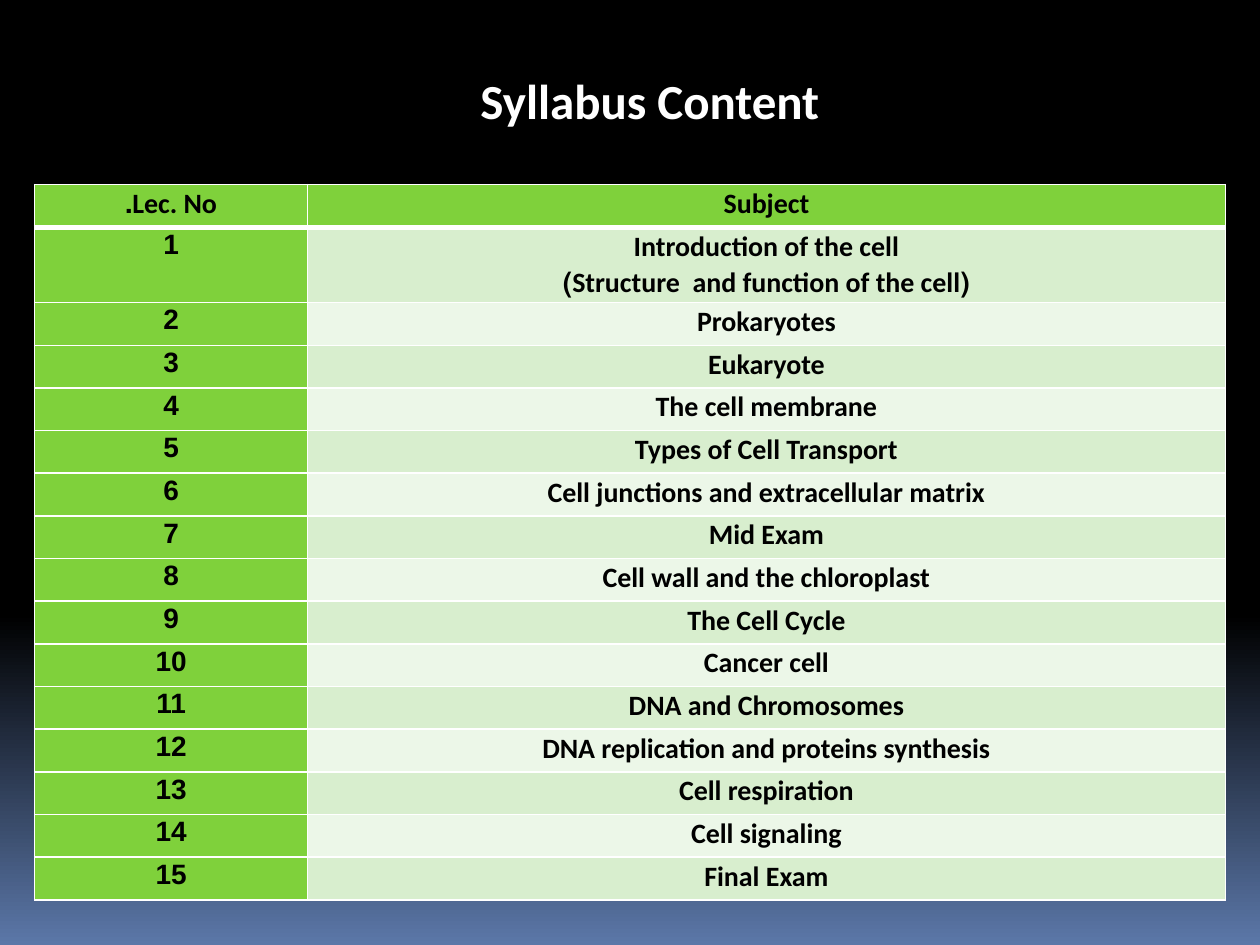
import dataclasses

import pptx
import pptx.dml.color
import pptx.enum.dml
import pptx.enum.shapes
import pptx.enum.text
import pptx.oxml.ns
import pptx.util
from lxml import etree

Cm = pptx.util.Cm
Pt = pptx.util.Pt
CENTER = pptx.enum.text.PP_ALIGN.CENTER


@dataclasses.dataclass(frozen=True)
class Theme:
    font: str = "Calibri"
    digit_font: str = "Arial"
    title_size: int = 28
    table_size: int = 16
    black: str = "000000"
    white: str = "FFFFFF"
    green: str = "7FD13B"
    bands: tuple = ("D8EECE", "ECF7E8")
    sky: tuple = ((0, "000000"), (65, "000000"), (100, "5B77A8"))


THEME = Theme()
SUBJECTS = [
    "Introduction of the cell\n(Structure  and function of the cell)",
    "Prokaryotes",
    "Eukaryote",
    "The cell membrane",
    "Types of Cell Transport",
    "Cell junctions and extracellular matrix",
    "Mid Exam",
    "Cell wall and the chloroplast",
    "The Cell Cycle",
    "Cancer cell",
    "DNA and Chromosomes",
    "DNA replication and proteins synthesis",
    "Cell respiration",
    "Cell signaling",
    "Final Exam",
]


def rgb(value):
    return pptx.dml.color.RGBColor.from_string(value)


def add_element(parent, tag, **attributes):
    element = etree.SubElement(parent, pptx.oxml.ns.qn(tag))
    for name, value in attributes.items():
        element.set(name, str(value))
    return element


def set_background(page):
    """Fill the page with the downward night-sky gradient."""
    fill = page.background.fill
    fill.gradient()
    gradient = page.background.fill._fill._gradFill
    for child in list(gradient):
        gradient.remove(child)
    stops = add_element(gradient, "a:gsLst")
    for position, color in THEME.sky:
        stop = add_element(stops, "a:gs", pos=position * 1000)
        add_element(stop, "a:srgbClr", val=color)
    add_element(gradient, "a:lin", ang=90 * 60000, scaled=0)


def write_text(frame, text, size, color, digit_font=None, **paragraph_format):
    """Write centred, bold, right-to-left lines into a text frame."""
    for index, line in enumerate(text.split("\n")):
        para = frame.add_paragraph() if index else frame.paragraphs[0]
        for name, value in {"alignment": CENTER, **paragraph_format}.items():
            setattr(para, name, value)
        para._p.get_or_add_pPr().set("rtl", "1")
        span = para.add_run()
        span.text = line
        for name, value in {"name": THEME.font, "size": Pt(size), "bold": True}.items():
            setattr(span.font, name, value)
        span.font.color.rgb = rgb(color)
        if digit_font:
            add_element(span._r.get_or_add_rPr(), "a:cs", typeface=digit_font)


def add_title(page, text):
    box = page.shapes.add_shape(
        pptx.enum.shapes.MSO_SHAPE.RECTANGLE, Cm(6.7), Cm(1.12), Cm(12.8), Cm(1.8))
    box.shadow.inherit = False
    box.fill.solid()
    box.fill.fore_color.rgb = rgb(THEME.black)
    box.line.color.rgb = rgb(THEME.black)
    box.line.width = Pt(1.5)
    box.text_frame.vertical_anchor = pptx.enum.text.MSO_ANCHOR.MIDDLE
    write_text(box.text_frame, text, THEME.title_size, THEME.white)


def set_borders(cell, top=1, bottom=1):
    widths = {"a:lnL": 1, "a:lnR": 1, "a:lnT": top, "a:lnB": bottom}
    for tag, width in widths.items():
        line = add_element(cell._tc.get_or_add_tcPr(), tag, w=Pt(width))
        add_element(add_element(line, "a:solidFill"), "a:srgbClr", val=THEME.white)


def fill_cell(cell, text, color, borders, **text_format):
    margins = {"margin_left": 0.18, "margin_right": 0.18, "margin_top": 0, "margin_bottom": 0}
    for name, value in margins.items():
        setattr(cell, name, Cm(value))
    set_borders(cell, **borders)
    cell.fill.solid()
    cell.fill.fore_color.rgb = rgb(color)
    write_text(cell.text_frame, text, THEME.table_size, THEME.black,
               line_spacing=1.07, **text_format)


def add_syllabus(page, subjects):
    column_widths = (5.5, 18.5)
    row_heights = [0.86] + [1.52 if "\n" in subject else 0.86 for subject in subjects]
    table = page.shapes.add_table(
        len(row_heights), len(column_widths), Cm(0.7), Cm(3.72),
        Cm(sum(column_widths)), Cm(sum(row_heights))).table
    for column, width in zip(table.columns, column_widths):
        column.width = Cm(width)
    for row, height in zip(table.rows, row_heights):
        row.height = Cm(height)

    for column, heading in enumerate(("Lec. No.", "Subject")):
        fill_cell(table.cell(0, column), heading, THEME.green, {"bottom": 3},
                  space_after=Pt(8))
    for number, subject in enumerate(subjects, 1):
        borders = {"top": 3 if number == 1 else 1}
        band = THEME.bands[(number - 1) % 2]
        fill_cell(table.cell(number, 0), str(number), THEME.green, borders,
                  digit_font=THEME.digit_font)
        fill_cell(table.cell(number, 1), subject, band, borders)


def main():
    deck = pptx.Presentation()
    deck.slide_width, deck.slide_height = Cm(25.4), Cm(19.05)
    page = deck.slides.add_slide(deck.slide_layouts[6])
    set_background(page)
    add_title(page, "Syllabus Content")
    add_syllabus(page, SUBJECTS)
    deck.save("out.pptx")


if __name__ == "__main__":
    main()
